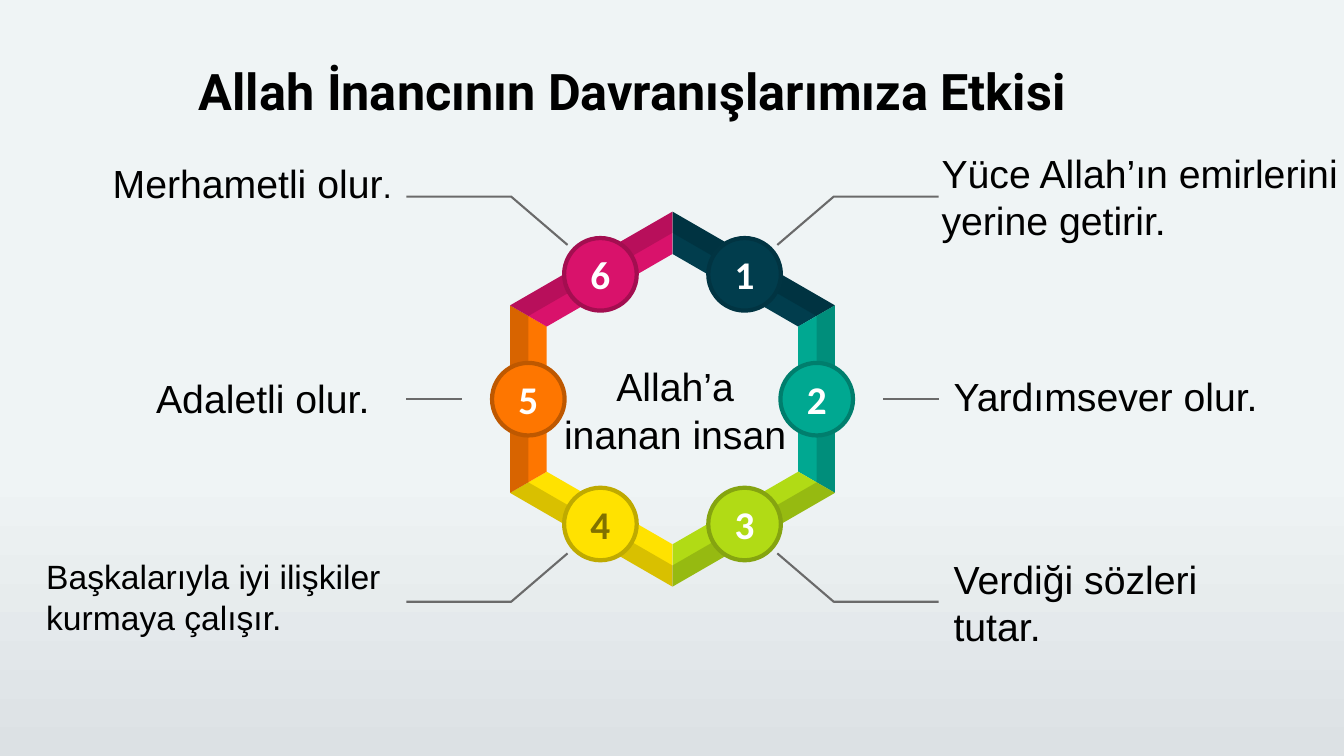
"""Build a slide with a numbered hexagon ring and six labelled behaviours."""
import math

import lxml.etree
import pptx
import pptx.dml.color
import pptx.enum.shapes
import pptx.enum.text
import pptx.oxml.ns
import pptx.util

Inches = pptx.util.Inches
ALIGN = pptx.enum.text.PP_ALIGN
ANCHOR = pptx.enum.text.MSO_ANCHOR
FIT = pptx.enum.text.MSO_AUTO_SIZE

CENTER_X, CENTER_Y = 6.67, 3.96
OUTER, MIDDLE, INNER = 1.86, 1.65, 1.44
BADGE_RADIUS, BADGE_SIZE = 1.43, 0.72

SEGMENTS = [
    ("013D4D", "013442", "FFFFFF"),
    ("00A891", "007E6D", "FFFFFF"),
    ("B1DB15", "85A410", "FFFFFF"),
    ("FFE200", "BFAA00", "807100"),
    ("FE7600", "BE5800", "FFFFFF"),
    ("D9126B", "A30E50", "FFFFFF"),
]

LABELS = [
    ("Yüce Allah’ın emirlerini yerine getirir.", 9.24, 1.43, 4.19, 1.04, 28),
    ("Yardımsever olur.", 9.36, 3.64, 4.19, 0.57, 28),
    ("Verdiği sözleri\ntutar.", 9.36, 5.46, 3.74, 1.04, 28),
    ("Başkalarıyla iyi ilişkiler kurmaya çalışır.", 0.36, 5.47, 3.67, 0.91, 24),
    ("Adaletli olur.", 1.45, 3.66, 2.52, 0.57, 28),
]


def color(value):
    return pptx.dml.color.RGBColor.from_string(value)


def polar(radius, degrees):
    angle = math.radians(degrees)
    return CENTER_X + radius * math.cos(angle), CENTER_Y + radius * math.sin(angle)


def corner(radius, index):
    return polar(radius, 60 * index - 90)


class Slide:
    """Hold the current slide and its text style."""

    font = "Arial"
    ink = "000000"

    def __init__(self, deck):
        self.page = deck.slides.add_slide(deck.slide_layouts[5])

    def background(self, top, bottom, start):
        fill = self.page.background.fill
        fill.gradient()
        fill.gradient_angle = 270
        for stop, shade, position in zip(fill.gradient_stops, (top, bottom), (start, 1)):
            stop.color.rgb = color(shade)
            stop.position = position

    def style(self, frame, size, font=None, ink=None, bold=False, align=ALIGN.LEFT):
        for para in frame.paragraphs:
            para.alignment = align
            for span in para.runs:
                span.font.size = pptx.util.Pt(size)
                span.font.name = font or self.font
                span.font.bold = bold
                span.font.color.rgb = color(ink or self.ink)

    def title(self, text, left, top, width, height):
        box = self.page.shapes.title
        box.left, box.top = Inches(left), Inches(top)
        box.width, box.height = Inches(width), Inches(height)
        frame = box.text_frame
        frame.text = text
        frame.auto_size = FIT.NONE
        frame.vertical_anchor = ANCHOR.TOP
        frame.margin_right = 0
        frame.paragraphs[0].line_spacing = 0.9
        self.style(frame, 36, "Roboto", bold=True)

    def label(self, text, left, top, width, height, size, align=ALIGN.LEFT):
        box = self.page.shapes.add_textbox(
            Inches(left), Inches(top), Inches(width), Inches(height))
        frame = box.text_frame
        frame.word_wrap = True
        frame.auto_size = FIT.SHAPE_TO_FIT_TEXT
        frame.text = text
        self.style(frame, size, align=align)
        return frame

    def outline(self, contours, closed):
        builder = None
        for contour in contours:
            points = [(Inches(x), Inches(y)) for x, y in contour]
            if builder is None:
                builder = self.page.shapes.build_freeform(*points[0])
            else:
                builder.move_to(*points[0])
            builder.add_line_segments(points[1:], close=closed)
        shape = builder.convert_to_shape()
        shape.shadow.inherit = False
        return shape

    def area(self, contours, fill, opacity=100):
        shape = self.outline(contours, True)
        shape.fill.solid()
        shape.fill.fore_color.rgb = color(fill)
        shape.line.fill.background()
        if opacity < 100:
            tint = shape.element.find(".//" + pptx.oxml.ns.qn("a:srgbClr"))
            alpha = lxml.etree.SubElement(tint, pptx.oxml.ns.qn("a:alpha"))
            alpha.set("val", str(opacity * 1000))

    def leaders(self, contours, stroke):
        shape = self.outline(contours, False)
        shape.fill.background()
        shape.line.color.rgb = color(stroke)
        shape.line.width = pptx.util.Pt(1.5)

    def badge(self, number, x, y, fill, rim, ink):
        shape = self.page.shapes.add_shape(
            pptx.enum.shapes.MSO_SHAPE.OVAL,
            Inches(x - BADGE_SIZE / 2), Inches(y - BADGE_SIZE / 2),
            Inches(BADGE_SIZE), Inches(BADGE_SIZE))
        shape.shadow.inherit = False
        shape.fill.solid()
        shape.fill.fore_color.rgb = color(fill)
        shape.line.color.rgb = color(rim)
        shape.line.width = pptx.util.Pt(3)
        frame = shape.text_frame
        frame.margin_left = frame.margin_right = Inches(0.04)
        frame.margin_top = frame.margin_bottom = Inches(0.04)
        frame.vertical_anchor = ANCHOR.MIDDLE
        frame.text = str(number)
        self.style(frame, 28, "Calibri", ink, True, ALIGN.CENTER)


def main():
    deck = pptx.Presentation()
    deck.slide_width, deck.slide_height = Inches(13.33), Inches(7.5)
    slide = Slide(deck)
    slide.background("EFF4F5", "DCE1E4", 0.62)
    slide.title("Allah İnancının Davranışlarımıza Etkisi", 1.87, 0.61, 9.59, 0.81)

    for index, (fill, rim, ink) in enumerate(SEGMENTS):
        slide.area([[corner(OUTER, index), corner(OUTER, index + 1),
                     corner(INNER, index + 1), corner(INNER, index)]], fill)
    slide.area([[corner(OUTER, index) for index in range(6)],
                [corner(MIDDLE, index) for index in reversed(range(6))]], "000000", 15)
    for index, colors in enumerate(SEGMENTS):
        slide.badge(index + 1, *polar(BADGE_RADIUS, 60 * index - 60), *colors)

    for side in (-1, 1):
        far, bend, near, short = (CENTER_X + side * reach for reach in (2.64, 1.6, 1.04, 2.09))
        bent = [[(far, CENTER_Y + way * 2.01), (bend, CENTER_Y + way * 2.01),
                 (near, CENTER_Y + way * 1.53)] for way in (-1, 1)]
        slide.leaders(bent + [[(far, CENTER_Y), (short, CENTER_Y)]], "6A6A6A")

    slide.label("Allah’a\ninanan insan", 5.32, 3.55, 2.75, 1.04, 28, ALIGN.CENTER)
    for label in LABELS:
        slide.label(*label)
    mercy = slide.label("Merhametli olur", 1.02, 1.53, 3, 0.57, 28)
    mercy.paragraphs[0].add_run().text = "."
    slide.style(mercy, 28)
    mercy.paragraphs[0].runs[-1].font.size = pptx.util.Pt(24)

    deck.save("out.pptx")


if __name__ == "__main__":
    main()
